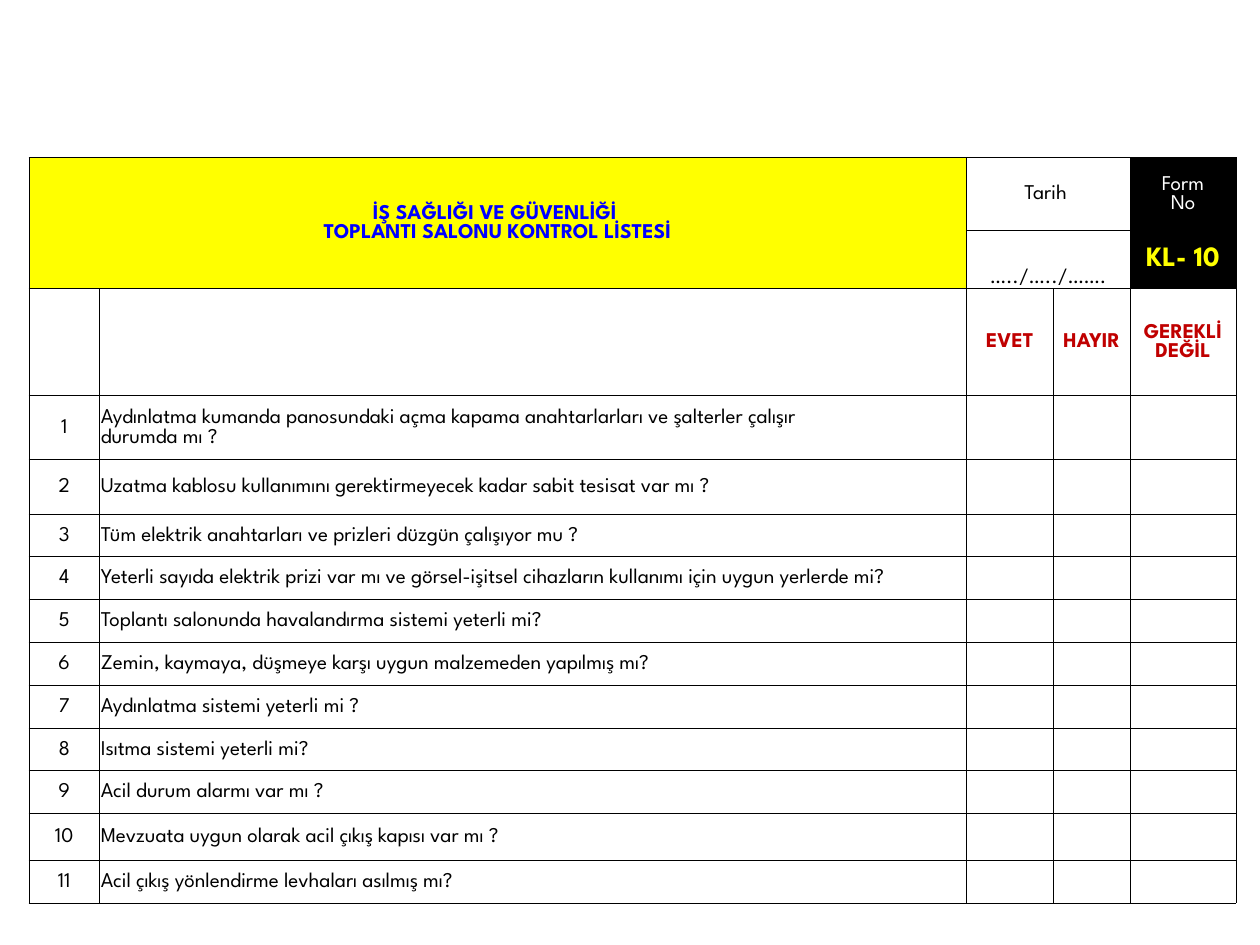
from copy import deepcopy

from lxml import etree
from pptx import Presentation, util as u
from pptx.dml.color import RGBColor
from pptx.enum import text
from pptx.oxml import ns

FONT = "League Spartan"
BLACK, WHITE, YELLOW = "000000", "FFFFFF", "FFFF00"
BLUE, RED = "0000FF", "C00000"
COLS = [0.56, 6.88, 0.69, 0.61, 0.84]
ROWS = [0.58, 0.46, 0.85, 0.51, 0.43] + [0.34] * 7 + [0.37, 0.34]
MERGED = [((0, 0), (1, 1)), ((0, 2), (0, 3)), ((1, 2), (1, 3))]
HEADS = ["EVET", "HAYIR", "GEREKLİ DEĞİL"]
ITEMS = [
    "Aydınlatma kumanda panosundaki açma kapama anahtarlarları ve şalterler çalışır \ndurumda mı ?",
    "Uzatma kablosu kullanımını gerektirmeyecek kadar sabit tesisat var mı ?",
    "Tüm elektrik anahtarları ve prizleri düzgün çalışıyor mu ?",
    "Yeterli sayıda elektrik prizi var mı ve görsel-işitsel cihazların kullanımı için uygun yerlerde mi?",
    "Toplantı salonunda havalandırma sistemi yeterli mi?",
    "Zemin, kaymaya, düşmeye karşı uygun malzemeden yapılmış mı?",
    "Aydınlatma sistemi yeterli mi ?",
    "Isıtma sistemi yeterli mi?",
    "Acil durum alarmı var mı ?",
    "Mevzuata uygun olarak acil çıkış kapısı var mı ?",
    "Acil çıkış yönlendirme levhaları asılmış mı?",
]


def color(code):
    return RGBColor.from_string(code)


def paint(cell, code):
    cell.fill.solid()
    cell.fill.fore_color.rgb = color(code)


def border(cell):
    props = cell._tc.get_or_add_tcPr()
    for side in ("lnL", "lnR", "lnT", "lnB"):
        line = etree.SubElement(props, ns.qn("a:" + side), w=str(u.Pt(0.5)))
        fill = etree.SubElement(line, ns.qn("a:solidFill"))
        etree.SubElement(fill, ns.qn("a:srgbClr"), val=BLACK)


def style(font, size, code, bold):
    font.name = FONT
    font.size = u.Pt(size)
    font.bold = bold
    font.color.rgb = color(code)


def write(cell, words, code=BLACK, size=12, bold=False, align="CENTER"):
    para = cell.text_frame.paragraphs[0]
    para.text = words
    para.alignment = text.PP_ALIGN[align]
    for part in (para, *para.runs):
        style(part.font, size, code, bold)
    for gap in para._p.findall(ns.qn("a:br")):
        gap.append(deepcopy(para.runs[0]._r.rPr))


def make_grid(slide):
    frame = slide.shapes.add_table(
        len(ROWS), len(COLS), u.Inches(0.23), u.Inches(1.25),
        u.Inches(sum(COLS)), u.Inches(sum(ROWS)))
    grid = frame.table
    grid.first_row = grid.horz_banding = False
    for col, width in zip(grid.columns, COLS):
        col.width = u.Inches(width)
    for row, height in zip(grid.rows, ROWS):
        row.height = u.Inches(height)
    for cell in grid.iter_cells():
        border(cell)
        paint(cell, WHITE)
        cell.margin_left = cell.margin_right = cell.margin_top = u.Inches(0.01)
        cell.margin_bottom = 0
        cell.vertical_anchor = text.MSO_ANCHOR.MIDDLE
        style(cell.text_frame.paragraphs[0].font, 12, BLACK, False)
    for start, end in MERGED:
        grid.cell(*start).merge(grid.cell(*end))
    return grid


def fill_head(grid):
    title, date, blank = (grid.cell(*start) for start, end in MERGED)
    paint(title, YELLOW)
    write(title, "İŞ SAĞLIĞI VE GÜVENLİĞİ \n TOPLANTI SALONU KONTROL LİSTESİ ", BLUE, bold=True)
    write(date, "Tarih ")
    write(blank, "…../…../…….")
    blank.vertical_anchor = text.MSO_ANCHOR.BOTTOM
    form, code = grid.cell(0, 4), grid.cell(1, 4)
    paint(form, BLACK)
    paint(code, BLACK)
    write(form, "Form\nNo", WHITE)
    write(code, "KL- 10", YELLOW, 16, True)
    for col, head in enumerate(HEADS, 2):
        write(grid.cell(2, col), head, RED, bold=True)


def fill_list(grid):
    for num, item in enumerate(ITEMS, 1):
        write(grid.cell(num + 2, 0), str(num))
        cell = grid.cell(num + 2, 1)
        cell.fill.background()
        write(cell, item, align="LEFT")


def main():
    deck = Presentation()
    deck.slide_width, deck.slide_height = u.Inches(10), u.Inches(7.5)
    slide = deck.slides.add_slide(deck.slide_layouts[6])
    grid = make_grid(slide)
    fill_head(grid)
    fill_list(grid)
    deck.save("out.pptx")


if __name__ == "__main__":
    main()
